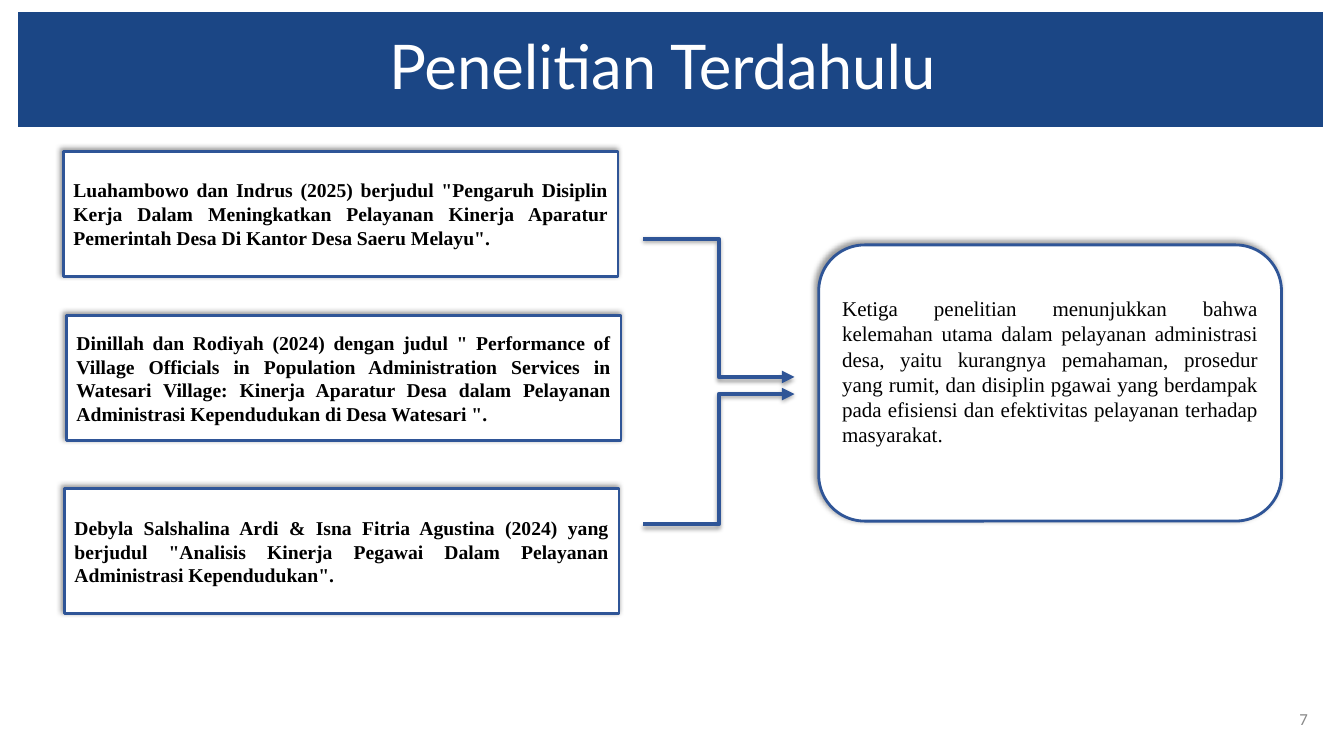
from dataclasses import dataclass

import pptx
import pptx.dml.color
import pptx.enum.shapes
import pptx.enum.text
import pptx.oxml
import pptx.oxml.ns
import pptx.util
from pptx.util import Inches

SHAPE = pptx.enum.shapes.MSO_SHAPE
ALIGN = pptx.enum.text.PP_ALIGN
MIDDLE = pptx.enum.text.MSO_ANCHOR.MIDDLE

WHITE, BLACK, GREY = "FFFFFF", "000000", "888888"
BANNER_BLUE, LINE_BLUE = "1B4685", "2F5597"
BODY_FONT = "Times New Roman"


@dataclass
class Card:
    left: float
    top: float
    width: float
    height: float
    text: str
    size: int = 14
    bold: bool = True
    outline: int = SHAPE.RECTANGLE
    bottom_inset: float = 0.05


@dataclass
class Shadow:
    opacity: int
    blur: float
    distance: float
    angle: int


@dataclass
class Arrow:
    start_y: float
    end_y: float


CARD_SHADOW = Shadow(40, 4, 3, 225)
ARROW_SHADOW = Shadow(35, 3.1, 1.8, 90)
ARROW_LEFT, ARROW_RIGHT = 6.38, 7.88

CARDS = [
    Card(0.63, 1.5, 5.5, 1.24,
         'Luahambowo dan Indrus (2025) berjudul "Pengaruh Disiplin Kerja Dalam '
         'Meningkatkan Pelayanan Kinerja Aparatur Pemerintah Desa Di Kantor Desa '
         'Saeru Melayu".'),
    Card(0.66, 3.13, 5.5, 1.24,
         'Dinillah dan Rodiyah (2024) dengan judul " Performance of Village Officials '
         'in Population Administration Services in Watesari Village: Kinerja Aparatur '
         'Desa dalam Pelayanan Administrasi Kependudukan di Desa Watesari ".'),
    Card(0.64, 4.85, 5.5, 1.24,
         'Debyla Salshalina Ardi & Isna Fitria Agustina (2024) yang berjudul "Analisis '
         'Kinerja Pegawai Dalam Pelayanan Administrasi Kependudukan".'),
    Card(8.12, 2.43, 4.59, 2.74,
         'Ketiga penelitian menunjukkan bahwa kelemahan utama dalam pelayanan '
         'administrasi desa, yaitu kurangnya pemahaman, prosedur yang rumit, dan '
         'disiplin pgawai yang berdampak pada efisiensi dan efektivitas pelayanan '
         'terhadap masyarakat.',
         size=15, bold=False, outline=SHAPE.ROUNDED_RECTANGLE, bottom_inset=0.28),
]
ARROWS = [Arrow(2.37, 3.74), Arrow(5.2, 3.91)]


def colour(value: str) -> pptx.dml.color.RGBColor:
    return pptx.dml.color.RGBColor.from_string(value)


def fill_with(shape, value: str) -> None:
    shape.fill.solid()
    shape.fill.fore_color.rgb = colour(value)


def set_line(shape, width: float) -> None:
    shape.line.color.rgb = colour(LINE_BLUE)
    shape.line.width = pptx.util.Pt(width)


def write(shape, text: str, font: str, size: int, value: str, align,
          bold: bool = False) -> None:
    frame = shape.text_frame
    frame.word_wrap = True
    frame.auto_size = pptx.enum.text.MSO_AUTO_SIZE.NONE
    frame.vertical_anchor = MIDDLE
    para = frame.paragraphs[0]
    para.text = text
    para.alignment = align
    para.font.name = font
    para.font.size = pptx.util.Pt(size)
    para.font.bold = bold
    para.font.color.rgb = colour(value)


def add_shadow(shape, shadow: Shadow) -> None:
    shape._element.spPr.append(pptx.oxml.parse_xml(
        f'<a:effectLst {pptx.oxml.ns.nsdecls("a")}>'
        f'<a:outerShdw blurRad="{pptx.util.Pt(shadow.blur)}" '
        f'dist="{pptx.util.Pt(shadow.distance)}" dir="{shadow.angle * 60000}" '
        f'rotWithShape="0"><a:srgbClr val="{BLACK}">'
        f'<a:alpha val="{shadow.opacity * 1000}"/></a:srgbClr>'
        f'</a:outerShdw></a:effectLst>'))


def add_card(page, card: Card) -> None:
    box = page.shapes.add_shape(card.outline, Inches(card.left), Inches(card.top),
                                Inches(card.width), Inches(card.height))
    fill_with(box, WHITE)
    set_line(box, 2)
    add_shadow(box, CARD_SHADOW)
    box.text_frame.margin_bottom = Inches(card.bottom_inset)
    write(box, card.text, BODY_FONT, card.size, BLACK, ALIGN.JUSTIFY, card.bold)


def add_arrow(page, arrow: Arrow) -> None:
    line = page.shapes.add_connector(
        pptx.enum.shapes.MSO_CONNECTOR.ELBOW, Inches(ARROW_LEFT), Inches(arrow.start_y),
        Inches(ARROW_RIGHT), Inches(arrow.end_y))
    set_line(line, 3)
    outline = line._element.spPr.find(pptx.oxml.ns.qn("a:ln"))
    outline.append(pptx.oxml.parse_xml(
        f'<a:tailEnd {pptx.oxml.ns.nsdecls("a")} type="triangle"/>'))
    add_shadow(line, ARROW_SHADOW)


def main() -> None:
    deck = pptx.Presentation()
    deck.slide_width, deck.slide_height = Inches(13.33), Inches(7.5)
    page = deck.slides.add_slide(deck.slide_layouts[5])

    # Title banner
    title = page.shapes.title
    title.left, title.top = Inches(0.18), Inches(0.12)
    title.width, title.height = Inches(12.94), Inches(1.14)
    fill_with(title, BANNER_BLUE)
    write(title, "Penelitian Terdahulu ", "Lato", 44, WHITE, ALIGN.CENTER)
    title.text_frame.paragraphs[0].line_spacing = 0.9

    # Earlier studies and their shared finding
    for card in CARDS:
        add_card(page, card)
    for arrow in ARROWS:
        add_arrow(page, arrow)

    # Page number
    number = page.shapes.add_textbox(Inches(12.5), Inches(6.93), Inches(0.57), Inches(0.4))
    write(number, "7", "Calibri", 12, GREY, ALIGN.RIGHT)

    deck.save("out.pptx")


if __name__ == "__main__":
    main()
